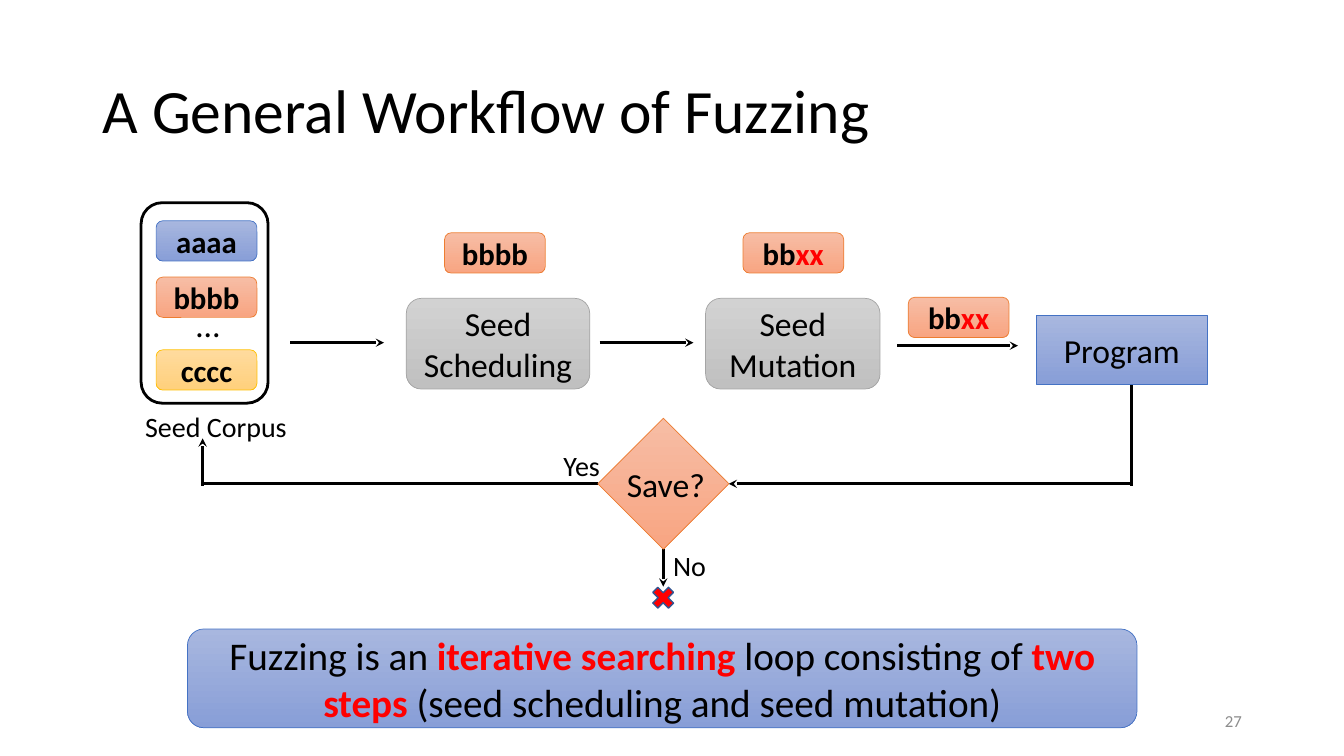
from lxml.etree import SubElement
from pptx import Presentation
from pptx.dml.color import RGBColor
from pptx.enum.shapes import MSO_CONNECTOR, MSO_SHAPE
from pptx.enum.text import MSO_ANCHOR, MSO_AUTO_SIZE, PP_ALIGN
from pptx.oxml.ns import qn
from pptx.util import Inches, Pt

deck = Presentation()
deck.slide_width, deck.slide_height = Inches(13.333), Inches(7.5)
slide = deck.slides.add_slide(deck.slide_layouts[6])
unit = deck.slide_width / 100  # square grid, 100 columns wide

BLACK, RED = "000000", "FF0000"
BLUE = ("A8B7DF", "889ED7"), "4472C4"
CORAL = ("F7BDA5", "F8A582"), "ED7D31"
GOLD = ("FFDB9E", "FFD07C"), "FFC000"
GREY = ("D2D2D2", "C0C0C0"), "A5A5A5"
ROUND = MSO_SHAPE.ROUNDED_RECTANGLE


def paint(fill, *tones):
    """Fill with one tone, or with two running from top to bottom."""
    if len(tones) == 1:
        fill.solid()
        fill.fore_color.rgb = RGBColor.from_string(tones[0])
        return
    fill.gradient()
    fill.gradient_angle = 270
    for stop, tone in zip(fill.gradient_stops, tones):
        stop.color.rgb = RGBColor.from_string(tone)


def place(area, parts=(), size=24, kind=None, look=None, width=0.5,
          bold=False, tone=BLACK, align=PP_ALIGN.CENTER, wrap=True):
    """Add a shape, or a text box without kind; every second part is red."""
    box = [round(n * unit) for n in area]
    if kind is None:
        shape = slide.shapes.add_textbox(*box)
    else:
        shape = slide.shapes.add_shape(kind, *box)
        shape.shadow.inherit = False
        paint(shape.fill, *look[0])
        paint(shape.line.fill, look[1])
        shape.line.width = Pt(width)
    frame = shape.text_frame
    frame.word_wrap = wrap
    frame.vertical_anchor = MSO_ANCHOR.MIDDLE if wrap else MSO_ANCHOR.TOP
    if not wrap:
        frame.auto_size = MSO_AUTO_SIZE.SHAPE_TO_FIT_TEXT
    para = frame.paragraphs[0]
    para.alignment = align
    for i, part in enumerate(parts):
        run = para.add_run()
        run.text = part
        run.font.name = "Calibri"
        run.font.size = Pt(size)
        run.font.bold = bold or i % 2 == 1
        paint(run.font.fill, RED if i % 2 else tone)
    return shape


# Title and page number
title = place((6.9, 3, 86.25, 10.88), ["A General Workflow of Fuzzing"], 44,
              align=PP_ALIGN.LEFT)
title.text_frame.paragraphs[0].line_spacing = 0.9
place((70.65, 52.12, 22.5, 3), ["27"], 12, tone="8C8C8C",
      align=PP_ALIGN.RIGHT)

# Flow lines: start, end, and which end has an arrowhead
left, right, back, mid = 15.08, 84.22, 36, 49.35
for x1, y1, x2, y2, end in [
    (21.6, 25.5, 28.58, 25.5, "tailEnd"),
    (44.62, 25.5, 51.6, 25.5, "tailEnd"),
    (66.75, 25.72, 75.75, 25.72, "tailEnd"),
    (right, 28.28, right, back + 0.15, None),
    (54.22, back, right, back, "headEnd"),
    (left, back, 44.48, back, None),
    (left, 32.62, left, back + 0.15, "headEnd"),
    (mid, 40.88, mid, 43.65, "tailEnd"),
]:
    ends = [round(n * unit) for n in (x1, y1, x2, y2)]
    link = slide.shapes.add_connector(MSO_CONNECTOR.STRAIGHT, *ends)
    paint(link.line.fill, BLACK)
    link.line.width = Pt(2)
    if end:
        SubElement(link.line._get_or_add_ln(), qn("a:" + end), type="stealth")
    SubElement(link._element.spPr, qn("a:effectLst"))

# Seed corpus and the seeds that leave it
place((10.5, 15.08, 9.45, 14.92), kind=ROUND, look=(("FFFFFF",), BLACK),
      width=2)
for x, y, parts, look in [
    (11.62, 16.43, ["aaaa"], BLUE),
    (11.62, 20.62, ["bbbb"], CORAL),
    (11.62, 26.03, ["cccc"], GOLD),
    (33.08, 17.32, ["bbbb"], CORAL),
    (55.28, 17.32, ["bb", "xx"], CORAL),
    (67.58, 22.12, ["bb", "xx"], CORAL),
]:
    place((x, y, 7.5, 3), parts, 22, ROUND, look, bold=True)

# Steps, choice and takeaway
for area, parts, size, kind, look in [
    ((30.23, 22.2, 13.65, 6.75), ["Seed Scheduling"], 24, ROUND, GREY),
    ((52.5, 22.2, 12.98, 6.75), ["Seed Mutation"], 24, ROUND, GREY),
    ((77.1, 23.48, 12.75, 5.1), ["Program"], 24, MSO_SHAPE.RECTANGLE, BLUE),
    ((44.48, 31.12, 9.75, 9.75), [], 24, MSO_SHAPE.DIAMOND, CORAL),
    ((13.95, 46.8, 70.65, 7.35),
     ["Fuzzing is an ", "iterative searching ", "loop consisting of ",
      "two steps ", "(seed scheduling and seed mutation)"], 28, ROUND, BLUE),
]:
    place(area, parts, size, kind, look)
place((48.22, 43.35, 2.25, 2.25), kind=MSO_SHAPE.MATH_MULTIPLY,
      look=((RED,), "325491"), width=1)

# Free labels
for x, y, w, h, text, size in [
    (13.88, 22.27, 3.3, 3.75, "…", 24),
    (10.05, 30.08, 12.38, 3.3, "Seed Corpus", 20),
    (45.9, 34.12, 7.43, 3.75, "Save?", 24),
    (41.18, 33, 4.28, 3.3, "Yes", 20),
    (mid, 40.43, 3.98, 3.3, "No", 20),
]:
    place((x, y, w, h), [text], size, align=PP_ALIGN.LEFT, wrap=False)

deck.save("out.pptx")
